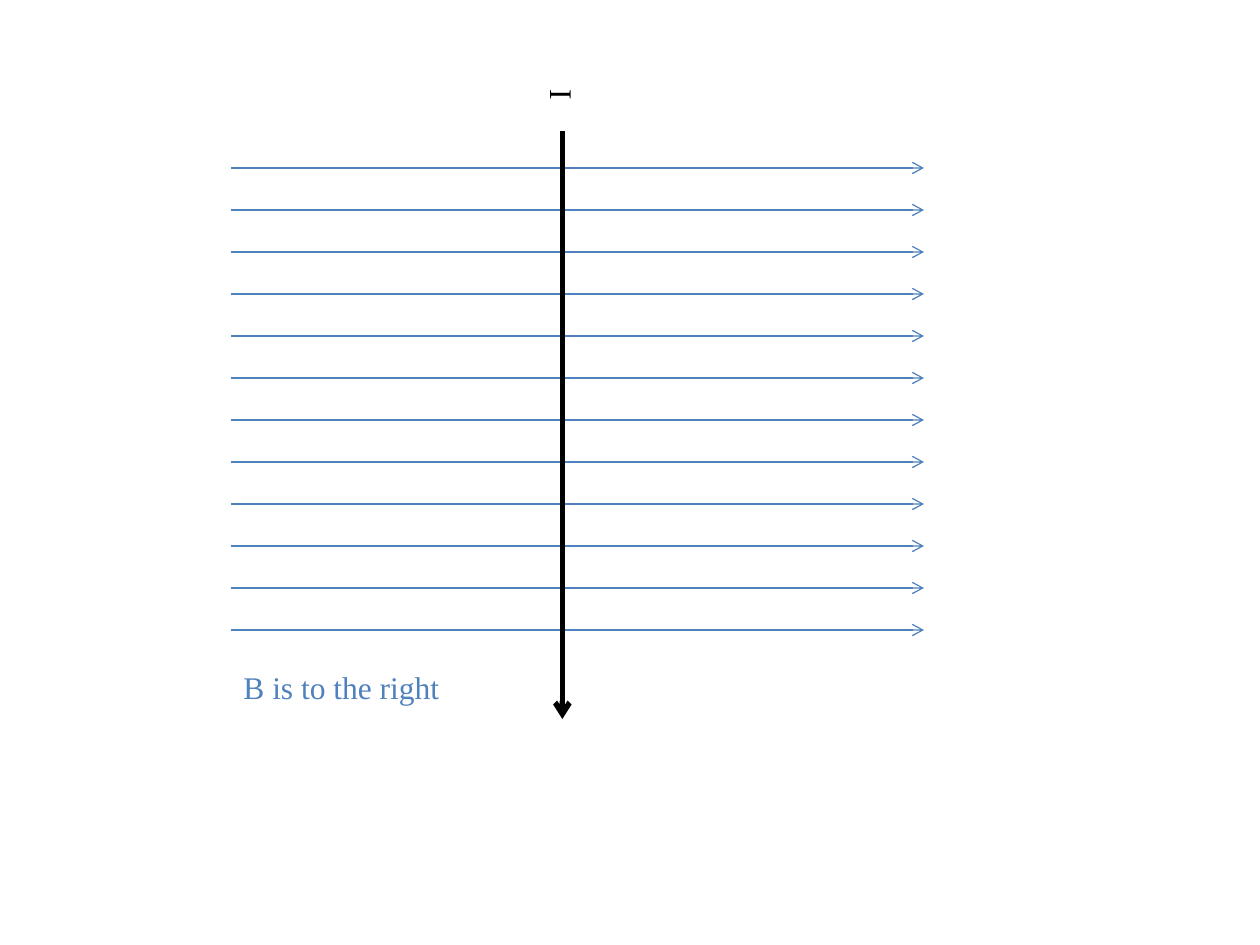
from pptx import Presentation
from pptx.dml.color import RGBColor as RGB
from pptx.enum.shapes import MSO_CONNECTOR as CONN
from pptx.enum.text import MSO_AUTO_SIZE as FIT
from pptx.oxml.ns import qn
from pptx.util import Inches, Pt
from lxml.etree import SubElement

COLORS = {"field": "4F81BD", "current": "000000"}
CELL = Inches(1) / 3  # grid of 30 columns by 22.5 rows


def add_arrow(group, x1, y1, x2, y2, color, width):
    ends = [round(v * CELL) for v in (x1, y1, x2, y2)]
    s = group.shapes.add_connector(CONN.STRAIGHT, *ends)
    s.line.color.rgb = RGB.from_string(COLORS[color])
    s.line.width = Pt(width)
    SubElement(s.line._get_or_add_ln(), qn("a:tailEnd"), type="arrow")
    SubElement(s._element.spPr, qn("a:effectLst"))


def add_label(group, text, x, y, w, h, color, rotation=0):
    s = group.shapes.add_textbox(*[round(v * CELL) for v in (x, y, w, h)])
    s.rotation = rotation
    tf = s.text_frame
    tf.word_wrap = False
    tf.auto_size = FIT.SHAPE_TO_FIT_TEXT
    p = tf.paragraphs[0]
    p.text = text
    p.font.size = Pt(18)
    p.font.name = "Times New Roman"
    p.font.color.rgb = RGB.from_string(COLORS[color])


prs = Presentation()
prs.slide_width, prs.slide_height = Inches(10), Inches(7.5)
slide = prs.slides.add_slide(prs.slide_layouts[6])

# Magnetic field: one arrow per grid row
field = slide.shapes.add_group_shape()
for row in range(4, 16):
    add_arrow(field, 5.5, row, 22, row, "field", 0.75)
add_label(field, "B is to the right", 5.5, 15.75, 5.3, 1.2, "field")

# Current: a wire running down across the field
current = slide.shapes.add_group_shape()
add_arrow(current, 13.39, 3.12, 13.39, 17.12, "current", 3)
add_label(current, "I", 12.96, 1.68, 0.87, 1.2, "current", rotation=90)

prs.save("out.pptx")
